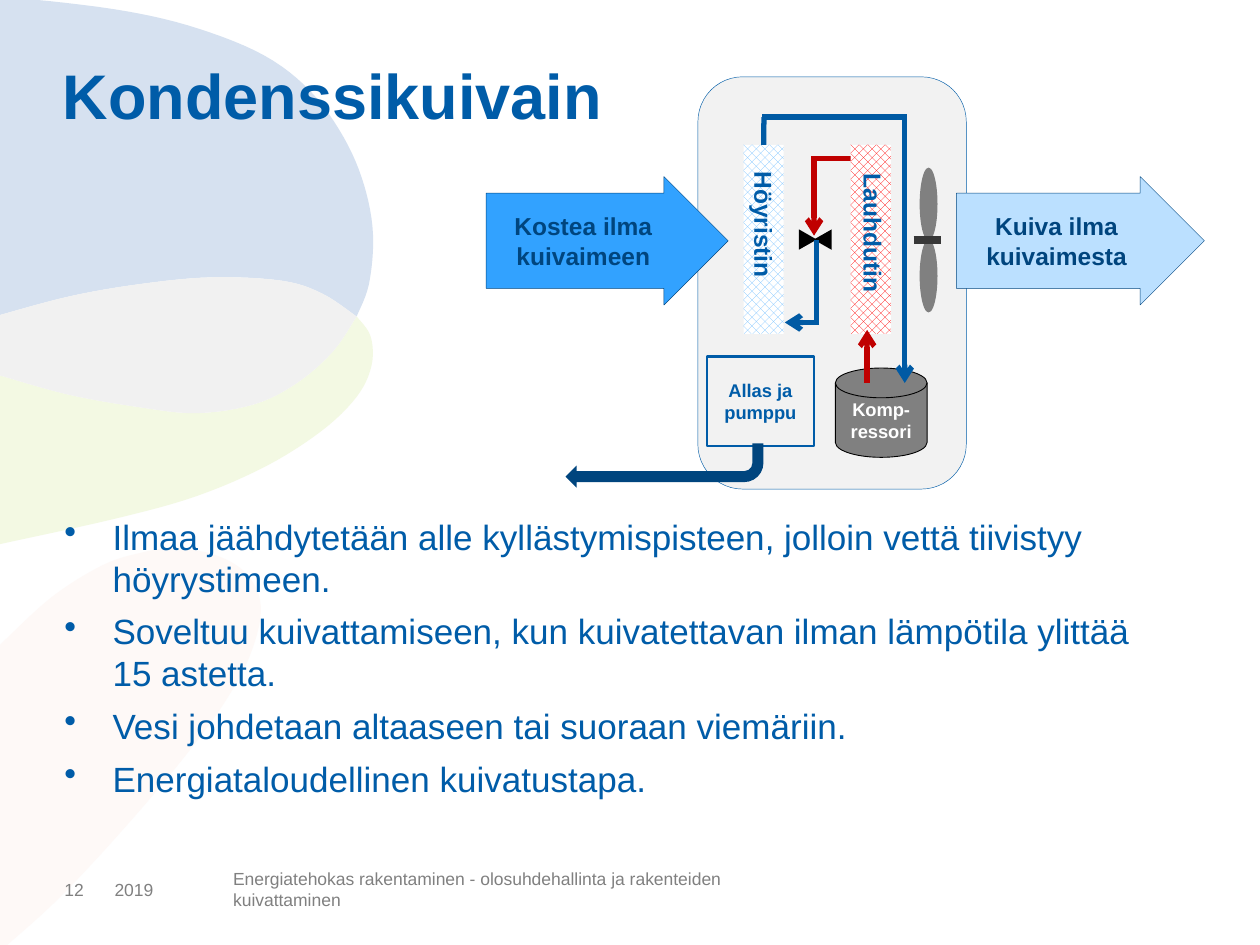
from dataclasses import dataclass

from lxml import etree
from pptx import Presentation
from pptx.dml.color import RGBColor
from pptx.enum.dml import MSO_PATTERN
from pptx.enum.shapes import MSO_CONNECTOR, MSO_SHAPE
from pptx.enum.text import MSO_ANCHOR, PP_ALIGN
from pptx.oxml.ns import qn
from pptx.util import Cm, Pt

STRAIGHT = MSO_CONNECTOR.STRAIGHT
MESH = MSO_PATTERN.PERCENT_50
RECT, ROUNDED, OVAL = MSO_SHAPE.RECTANGLE, MSO_SHAPE.ROUNDED_RECTANGLE, MSO_SHAPE.OVAL
TRIANGLE, DISK = MSO_SHAPE.ISOSCELES_TRIANGLE, MSO_SHAPE.FLOWCHART_MAGNETIC_DISK
ARROW, BENT_ARROW = MSO_SHAPE.RIGHT_ARROW, MSO_SHAPE.BENT_ARROW
TOP, MIDDLE = MSO_ANCHOR.TOP, MSO_ANCHOR.MIDDLE
LEFT, CENTER = PP_ALIGN.LEFT, PP_ALIGN.CENTER

COLORS = {
    "white": "FFFFFF", "black": "000000", "grey": "808080", "charcoal": "383838",
    "blue": "005CA8", "pipe": "005AA4", "navy": "00457E", "hot": "C00000",
    "moist": "32A2FF", "dry": "BBE0FF", "cabinet": "F2F2F2",
    "cold mesh": "76C1FF", "hot mesh": "FF0000",
    "pink": "FEF9F7", "green": "F3F9E3", "sky": "D6E1F0", "overlap": "F1F1F1",
}

# Background leaves: edges shared by neighbours, in cm
UPPER_EDGE = [(0, 6.35), (1.42, 5.97), (2.87, 5.72), (4.29, 5.59), (5.69, 5.66),
              (6.5, 5.92), (7.19, 6.38)]
LOWER_EDGE = [(7.19, 6.38), (6.71, 7.09), (5.99, 7.72), (5.13, 8.15), (3.96, 8.33),
              (2.74, 8.2), (1.35, 7.95), (0, 7.57)]
SKY_EDGE = [(0, 0), (0.76, 0), (2.57, 0.23), (4.01, 0.58), (5.33, 1.12), (6.25, 1.83),
            (6.93, 2.77), (7.34, 3.73), (7.52, 4.72), (7.44, 5.72), (7.19, 6.38)]
GREEN_EDGE = [(7.19, 6.38), (7.47, 6.78), (7.49, 7.37), (7.19, 8), (6.48, 8.69),
              (5.36, 9.4), (3.94, 10.01), (2.31, 10.46), (0, 10.97)]
PINK_EDGE = [(0, 13), (1.04, 12.04), (2.06, 11.4), (2.82, 11.15), (3.53, 11.05),
             (4.37, 11.2), (4.98, 11.58), (5.26, 12.22), (5.08, 13.11), (4.6, 14.05),
             (3.76, 15.21), (2.54, 16.66), (1.22, 18.08), (0.15, 19.05)]
LEAVES = [
    ("pink", [PINK_EDGE, [(0, 19.05)]]),
    ("green", [GREEN_EDGE, LOWER_EDGE[::-1]]),
    ("sky", [SKY_EDGE, UPPER_EDGE[::-1]]),
    ("overlap", [UPPER_EDGE, LOWER_EDGE]),
]


@dataclass
class Part:
    kind: int
    box: tuple
    fill: str = ""
    line: str = ""
    width: float = 0.25
    rotation: int = 0
    adjustments: tuple = ()
    lines: tuple = ()
    size: float = 14
    color: str = "navy"


@dataclass
class Pipe:
    start: tuple
    end: tuple
    color: str = "pipe"
    arrow: bool = False
    width: float = 3


@dataclass
class Label:
    box: tuple
    lines: tuple
    size: float
    color: str
    bold: bool = False
    anchor: int = TOP
    inset: float = 0
    rotation: int = 0
    wrap: bool = True
    spacing: float = 1
    bullets: bool = False


def rgb(name: str) -> RGBColor:
    return RGBColor.from_string(COLORS[name])


def smooth(points: list, steps: int = 6) -> list:
    """Catmull-Rom curve through the points."""
    if len(points) < 2:
        return points
    ends = [points[0], *points, points[-1]]
    curve = [points[0]]
    for a, b, c, d in zip(ends, ends[1:], ends[2:], ends[3:]):
        for t in (step / steps for step in range(1, steps + 1)):
            curve.append(tuple(
                (2 * q + (r - p) * t + (2 * p - 5 * q + 4 * r - s) * t**2
                 + (3 * q - p - 3 * r + s) * t**3) / 2
                for p, q, r, s in zip(a, b, c, d)))
    return curve


def draw_leaf(shapes, color: str, edges: list) -> None:
    outline = [(Cm(x), Cm(y)) for edge in edges for x, y in smooth(edge)]
    builder = shapes.build_freeform(*outline[0])
    builder.add_line_segments(outline[1:], close=True)
    leaf = builder.convert_to_shape()
    leaf.shadow.inherit = False
    leaf.fill.solid()
    leaf.fill.fore_color.rgb = rgb(color)
    leaf.line.fill.background()


def write(frame, lines: tuple, size: float, color: str, bold: bool,
          align: int = LEFT, spacing: float = 1, bullets: bool = False) -> None:
    formats = {"name": "Arial", "size": Pt(size), "bold": bold}
    for index, line in enumerate(lines):
        paragraph = frame.add_paragraph() if index else frame.paragraphs[0]
        paragraph.text = line
        paragraph.alignment = align
        paragraph.line_spacing = spacing
        if bullets:
            properties = paragraph._p.get_or_add_pPr()
            properties.set("marL", str(Cm(0.97)))
            properties.set("indent", str(Cm(-0.97)))
            etree.SubElement(properties, qn("a:buChar"), char="•")
            paragraph.space_before = Pt(6 if index else 0)
        for run in paragraph.runs:
            for attribute, value in formats.items():
                setattr(run.font, attribute, value)
            run.font.color.rgb = rgb(color)


def draw_part(shapes, part: Part):
    shape = shapes.add_shape(part.kind, *map(Cm, part.box))
    shape.shadow.inherit = False
    shape.rotation = part.rotation
    for index, value in enumerate(part.adjustments):
        shape.adjustments[index] = value
    if part.fill.endswith("mesh"):
        shape.fill.patterned()
        shape.fill.pattern = MESH
        shape.fill.fore_color.rgb = rgb(part.fill)
        shape.fill.back_color.rgb = rgb("white")
    elif part.fill:
        shape.fill.solid()
        shape.fill.fore_color.rgb = rgb(part.fill)
    else:
        shape.fill.background()
    if part.line:
        shape.line.color.rgb = rgb(part.line)
        shape.line.width = Pt(part.width)
    else:
        shape.line.fill.background()
    if part.lines:
        shape.text_frame.vertical_anchor = MIDDLE
        write(shape.text_frame, part.lines, part.size, part.color, True, CENTER)
    return shape


def draw_pipe(shapes, pipe: Pipe):
    line = shapes.add_connector(STRAIGHT, *map(Cm, (*pipe.start, *pipe.end)))
    line.line.color.rgb = rgb(pipe.color)
    line.line.width = Pt(pipe.width)
    if pipe.arrow:
        etree.SubElement(line.line._get_or_add_ln(), qn("a:tailEnd"), type="arrow")
    etree.SubElement(line._element.spPr, qn("a:effectLst"))
    return line


def draw_label(shapes, label: Label) -> None:
    box = shapes.add_textbox(*map(Cm, label.box))
    box.rotation = label.rotation
    frame = box.text_frame
    side, edge = Cm(label.inset), Cm(label.inset / 2)
    formats = {"word_wrap": label.wrap, "vertical_anchor": label.anchor,
               "margin_left": side, "margin_right": side,
               "margin_top": edge, "margin_bottom": edge}
    for attribute, value in formats.items():
        setattr(frame, attribute, value)
    write(frame, label.lines, label.size, label.color, label.bold,
          spacing=label.spacing, bullets=label.bullets)


def draw_all(shapes, items: list) -> None:
    draw = {Part: draw_part, Pipe: draw_pipe, Label: draw_label}
    for item in items:
        draw[type(item)](shapes, item)


TEXTS = [
    Label((1.27, 1.32, 22.86, 3.2), ("Kondenssikuivain",), 36, "blue", True, spacing=0.9),
    Label((1.3, 10.39, 22.81, 5.74), (
        "Ilmaa jäähdytetään alle kyllästymispisteen, jolloin vettä tiivistyy höyrystimeen.",
        "Soveltuu kuivattamiseen, kun kuivatettavan ilman lämpötila ylittää\v15 astetta.",
        "Vesi johdetaan altaaseen tai suoraan viemäriin.",
        "Energiataloudellinen kuivatustapa."), 20, "blue", bullets=True),
    *(Label((x, 17.73, width, 0.4), (text,), 10, "grey", anchor=MIDDLE)
      for x, width, text in [
          (2.31, 2.39, "2019"),
          (4.7, 10.21, "Energiatehokas rakentaminen - olosuhdehallinta ja rakenteiden kuivattaminen"),
          (1.3, 0.99, "12")]),
]
# Cabinet, expansion valve and the pipes behind the coils
CABINET = [
    Part(ROUNDED, (14.07, 1.55, 5.41, 8.31), "cabinet", "blue"),
    Part(TRIANGLE, (16.08, 4.65, 0.41, 0.36), "black", rotation=90),
    Part(TRIANGLE, (16.38, 4.65, 0.41, 0.36), "black", rotation=270),
    Pipe((16.46, 6.53), (16.46, 4.83)),
    Pipe((17.15, 3.2), (16.41, 3.2), "hot"),
]
EVAPORATOR = Part(RECT, (14.99, 2.92, 0.81, 3.81), "cold mesh")
SUCTION_PIPE = Pipe((15.4, 2.36), (15.4, 2.92))
# Condenser, compressor, air flows, basin and fan
CIRCUIT = [
    Part(RECT, (17.15, 2.92, 0.81, 3.81), "hot mesh"),
    Pipe((16.41, 3.15), (16.41, 4.75), "hot", True),
    Pipe((16.51, 6.5), (15.82, 6.5), arrow=True),
    Part(DISK, (16.84, 7.42, 1.85, 1.8), "grey", "black", 0.5,
         lines=("Komp-ressori",), size=10.5, color="white"),
    Pipe((18.24, 2.36), (18.24, 7.72), arrow=True),
    Pipe((15.37, 2.36), (18.29, 2.36)),
    Pipe((17.48, 7.72), (17.48, 6.65), "hot", True),
    Part(ARROW, (9.8, 3.56, 4.88, 2.59), "moist", "navy", adjustments=(0.74, 0.5),
         lines=("Kostea ilma", "kuivaimeen")),
    Part(ARROW, (19.28, 3.56, 5, 2.59), "dry", "navy", adjustments=(0.74, 0.5),
         lines=("Kuiva ilma", "kuivaimesta")),
    Part(RECT, (14.25, 7.19, 2.16, 1.8), line="blue", width=1.5,
         lines=("Allas ja pumppu",), size=10.5, color="blue"),
    Part(BENT_ARROW, (11.4, 8.94, 3.99, 0.89), "navy", rotation=180),
    *(Part(OVAL, (18.54, y, 0.36, 1.47), "grey") for y in (3.38, 4.83)),
    Pipe((18.42, 4.83), (18.97, 4.83), "charcoal", width=4.5),
    Label((14, 4.17, 2.79, 0.86), ("Höyristin",), 14, "blue", True,
          inset=0.25, rotation=90, wrap=False),
    Label((16.1, 4.32, 3, 0.86), ("Lauhdutin",), 14, "blue", True,
          inset=0.25, rotation=90),
]


def main() -> None:
    deck = Presentation()
    deck.slide_width, deck.slide_height = Cm(25.4), Cm(19.05)
    shapes = deck.slides.add_slide(deck.slide_layouts[6]).shapes
    for color, edges in LEAVES:
        draw_leaf(shapes, color, edges)
    draw_all(shapes, TEXTS + CABINET)
    evaporator = draw_part(shapes, EVAPORATOR)
    draw_pipe(shapes, SUCTION_PIPE).end_connect(evaporator, 0)
    draw_all(shapes, CIRCUIT)
    deck.save("out.pptx")


if __name__ == "__main__":
    main()
